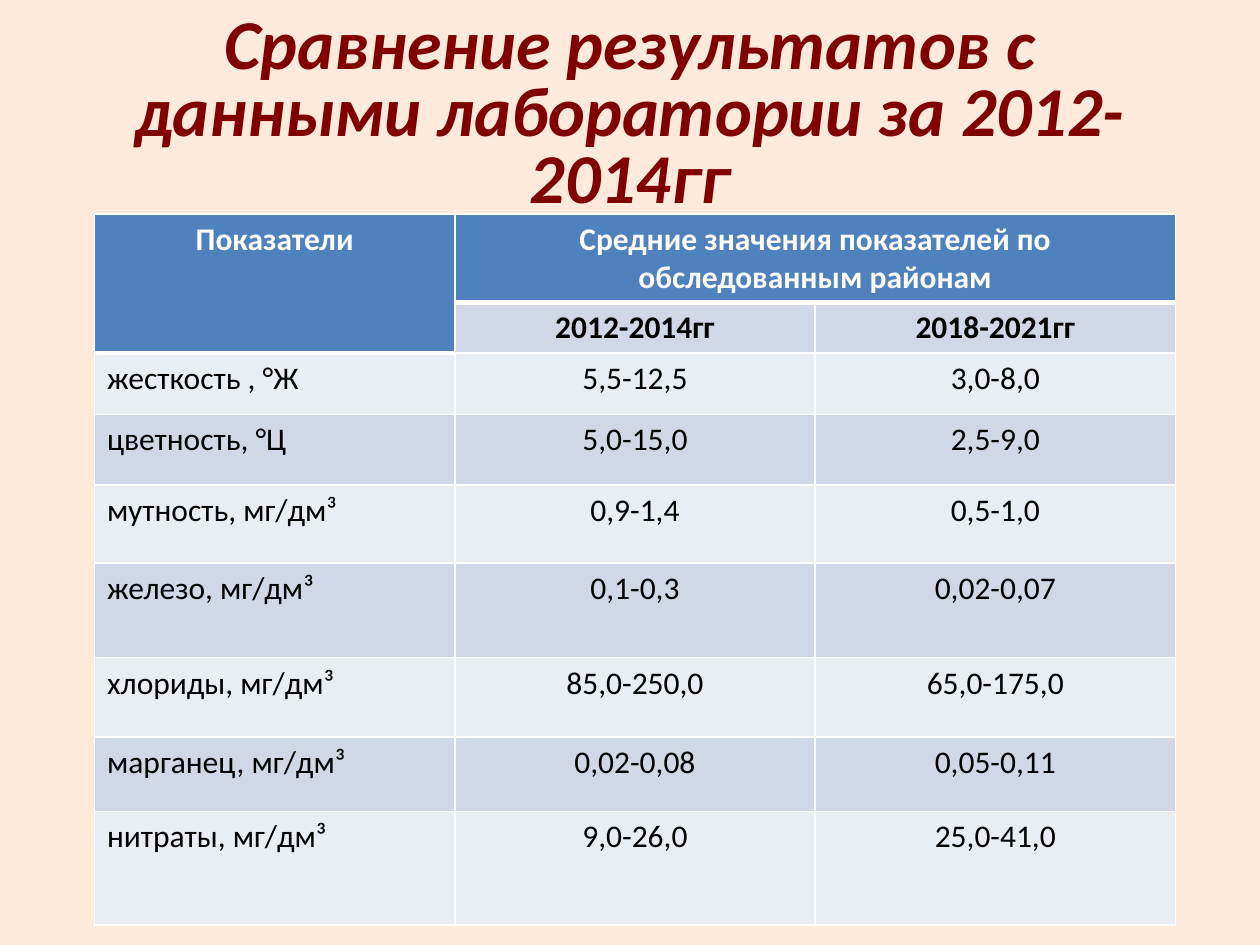
from lxml import etree
from pptx import Presentation
from pptx.dml.color import RGBColor
from pptx.enum.text import MSO_ANCHOR, PP_ALIGN
from pptx.oxml.ns import qn
from pptx.util import Inches, Pt

CENTER, LEFT = PP_ALIGN.CENTER, PP_ALIGN.LEFT
MIDDLE = MSO_ANCHOR.MIDDLE

TITLE = "Сравнение результатов с данными лаборатории за 2012-2014гг"
ROWS = [
    ("Показатели", "Средние значения показателей по обследованным районам", ""),
    ("", "2012-2014гг", "2018-2021гг"),
    ("жесткость , °Ж", "5,5-12,5", "3,0-8,0"),
    ("цветность, °Ц", "5,0-15,0", "2,5-9,0"),
    ("мутность, мг/дм³", "0,9-1,4", "0,5-1,0"),
    ("железо, мг/дм³", "0,1-0,3", "0,02-0,07"),
    ("хлориды, мг/дм³", "85,0-250,0", "65,0-175,0"),
    ("марганец, мг/дм³", "0,02-0,08", "0,05-0,11"),
    ("нитраты, мг/дм³", "9,0-26,0", "25,0-41,0"),
]
ROW_HEIGHTS = [0.7, 0.4, 0.49, 0.56, 0.62, 0.75, 0.63, 0.59, 0.9]
COLUMN_WIDTH = 2.86
HEADER_ROWS = 2
HEADER_FILL, BANDS = "4F81BD", ("E9EDF4", "D0D8E8")
BACKGROUND, TITLE_COLOR, WHITE, BLACK = "FDEADA", "800000", "FFFFFF", "000000"


def rgb(value):
    return RGBColor.from_string(value)


def write(frame, text, size=18, color=BLACK, bold=False, italic=False,
          align=CENTER, line_spacing=1.0):
    paragraph = frame.paragraphs[0]
    paragraph.alignment = align
    paragraph.line_spacing = line_spacing
    run = paragraph.add_run()
    run.text = text
    font = run.font
    font.name, font.size, font.bold, font.italic = "Calibri", Pt(size), bold, italic
    font.color.rgb = rgb(color)


def set_borders(cell, top, bottom):
    """Draw white borders; top and bottom are widths in points, sides are 1."""
    properties = cell._tc.get_or_add_tcPr()
    for side, width in (("L", 1), ("R", 1), ("T", top), ("B", bottom)):
        line = etree.SubElement(properties, qn(f"a:ln{side}"), w=str(Pt(width)))
        fill = etree.SubElement(line, qn("a:solidFill"))
        etree.SubElement(fill, qn("a:srgbClr"), val=WHITE)


def add_title(slide):
    title = slide.shapes.add_textbox(Inches(0.5), Inches(0.3), Inches(9), Inches(1.25))
    title.text_frame.word_wrap = True
    title.text_frame.vertical_anchor = MIDDLE
    write(title.text_frame, TITLE, size=40, color=TITLE_COLOR,
          bold=True, italic=True, line_spacing=0.8)


def add_results(slide):
    columns = len(ROWS[0])
    results = slide.shapes.add_table(
        len(ROWS), columns, Inches(0.75), Inches(1.7),
        Inches(columns * COLUMN_WIDTH), Inches(sum(ROW_HEIGHTS))).table
    for column in results.columns:
        column.width = Inches(COLUMN_WIDTH)
    for row, height in zip(results.rows, ROW_HEIGHTS):
        row.height = Inches(height)

    results.cell(0, 0).merge(results.cell(1, 0))
    results.cell(0, 1).merge(results.cell(0, 2))

    for r, texts in enumerate(ROWS):
        for c, text in enumerate(texts):
            cell = results.cell(r, c)
            is_header = r == 0 or (r == 1 and c == 0)
            header_end = 1 if c == 0 else 0
            bottom = 3 if r == header_end or (r, c) == (0, 0) else 1
            set_borders(cell, top=3 if r == header_end + 1 else 1, bottom=bottom)
            cell.fill.solid()
            cell.fill.fore_color.rgb = rgb(HEADER_FILL if is_header else BANDS[r % 2])
            if text:
                write(cell.text_frame, text,
                      color=WHITE if is_header else BLACK,
                      bold=r < HEADER_ROWS,
                      align=LEFT if c == 0 and not is_header else CENTER)


def main():
    deck = Presentation()
    deck.slide_width, deck.slide_height = Inches(10), Inches(7.5)
    slide = deck.slides.add_slide(deck.slide_layouts[6])
    slide.background.fill.solid()
    slide.background.fill.fore_color.rgb = rgb(BACKGROUND)
    add_title(slide)
    add_results(slide)
    deck.save("out.pptx")


if __name__ == "__main__":
    main()
